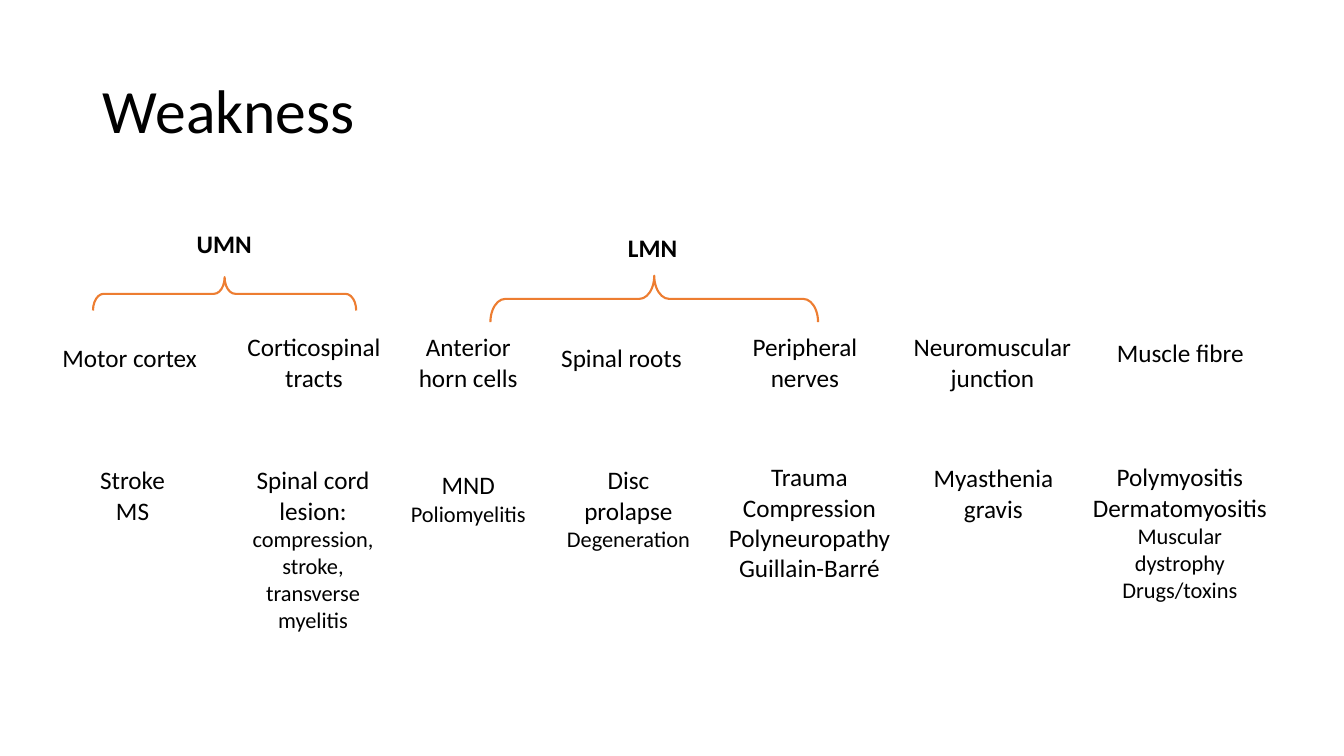
import pptx
import pptx.util
import pptx.dml.color
import pptx.enum.shapes
import pptx.enum.text

Pt = pptx.util.Pt
ALIGN = pptx.enum.text.PP_ALIGN
ANCHOR = pptx.enum.text.MSO_ANCHOR
BLACK = pptx.dml.color.RGBColor(0, 0, 0)
ORANGE = pptx.dml.color.RGBColor(0xED, 0x7D, 0x31)
FONT = "Calibri"
BIG, SMALL = 18, 16

# Boxes are (left, top, width, height); a paragraph is a list of (text, size) runs.
TITLE = "Weakness", (66.24, 28.75, 828, 104.4)
SITES = [
    ("Motor cortex", (37.44, 241.2, 136, 28.8), ALIGN.LEFT),
    ("Corticospinal tracts", (164.9, 233.3, 118.8, 51), ALIGN.CENTER),
    ("Anterior horn cells", (283.7, 233.3, 101.5, 51), ALIGN.CENTER),
    ("Spinal roots", (393.8, 241.2, 101.5, 28.8), ALIGN.LEFT),
    ("Peripheral nerves", (524.2, 233.3, 101.5, 51), ALIGN.CENTER),
    ("Neuromuscular junction", (644.4, 233.3, 128.9, 51), ALIGN.CENTER),
    ("Muscle fibre", (782.6, 237.6, 121, 28.8), ALIGN.CENTER),
]
CAUSES = [
    ([[("Stroke", BIG)], [("MS", BIG)]], (56.2, 328.3, 77, 51)),
    ([[("Spinal cord lesion: ", BIG),
       ("compression, stroke, transverse myelitis", SMALL)]],
     (167.8, 328.3, 111.6, 128.2)),
    ([[("MND", BIG)], [("Poliomyelitis", SMALL)]], (279.4, 331.9, 110.2, 48.2)),
    ([[("Disc prolapse", BIG)], [("Degeneration", SMALL)]],
     (393.8, 328.3, 110.2, 70.6)),
    ([[("Trauma", BIG)], [("Compression", BIG)], [("Polyneuropathy", BIG)],
      [("Guillain-Barré", BIG)]], (509.8, 326.2, 136.8, 94.3)),
    ([[("Myasthenia gravis", BIG)]], (654.5, 326.9, 110.2, 51)),
    ([[("Polymyositis", BIG)], [("Dermatomyositis", BIG)],
      [("Muscular dystrophy", SMALL)], [("Drugs/toxins", SMALL)]],
     (773.3, 326.2, 139, 111.6)),
]
# Label, its box, then the brace as it shows: centre x, centre y, span, depth
GROUPS = [
    ("UMN", (118.1, 159.8, 84.2, 28.8), (160.4, 209.9, 188, 23.8)),
    ("LMN", (424.1, 162.7, 84.2, 28.8), (467.3, 213.5, 234, 33.1)),
]


def style(font, size, bold=False):
    font.name, font.size, font.bold = FONT, Pt(size), bold
    font.color.rgb = BLACK


def write(slide, paras, box, align=ALIGN.CENTER, bold=False):
    frame = slide.shapes.add_textbox(*map(Pt, box)).text_frame
    frame.word_wrap = True
    frame.auto_size = pptx.enum.text.MSO_AUTO_SIZE.SHAPE_TO_FIT_TEXT
    for i, runs in enumerate(paras):
        para = frame.add_paragraph() if i else frame.paragraphs[0]
        para.alignment = align
        style(para.font, runs[0][1], bold)
        for text, size in runs:
            run = para.add_run()
            run.text = text
            if size != runs[0][1]:
                style(run.font, size, bold)


def brace(slide, mid, top, span, depth):
    """Draw a left brace turned a quarter so that it points up."""
    shape = slide.shapes.add_shape(
        pptx.enum.shapes.MSO_SHAPE.LEFT_BRACE,
        Pt(mid - depth / 2), Pt(top - span / 2), Pt(depth), Pt(span))
    shape.rotation = 90
    shape.adjustments[0] = 0.32
    shape.shadow.inherit = False
    shape.fill.background()
    shape.line.color.rgb = ORANGE
    shape.line.width = Pt(1.5)


def head(slide, text, box):
    title = slide.shapes.title
    title.left, title.top, title.width, title.height = map(Pt, box)
    frame = title.text_frame
    frame.text = text
    frame.vertical_anchor = ANCHOR.MIDDLE
    para = frame.paragraphs[0]
    para.alignment = ALIGN.LEFT
    para.line_spacing = 0.9
    style(para.font, 44)


def main():
    deck = pptx.Presentation()
    deck.slide_width, deck.slide_height = Pt(960), Pt(540)
    slide = deck.slides.add_slide(deck.slide_layouts[5])
    head(slide, *TITLE)
    for text, box, align in SITES:
        write(slide, [[(text, BIG)]], box, align)
    for paras, box in CAUSES:
        write(slide, paras, box)
    for label, box, curve in GROUPS:
        brace(slide, *curve)
        write(slide, [[(label, BIG)]], box, bold=True)
    deck.save("out.pptx")


if __name__ == "__main__":
    main()
